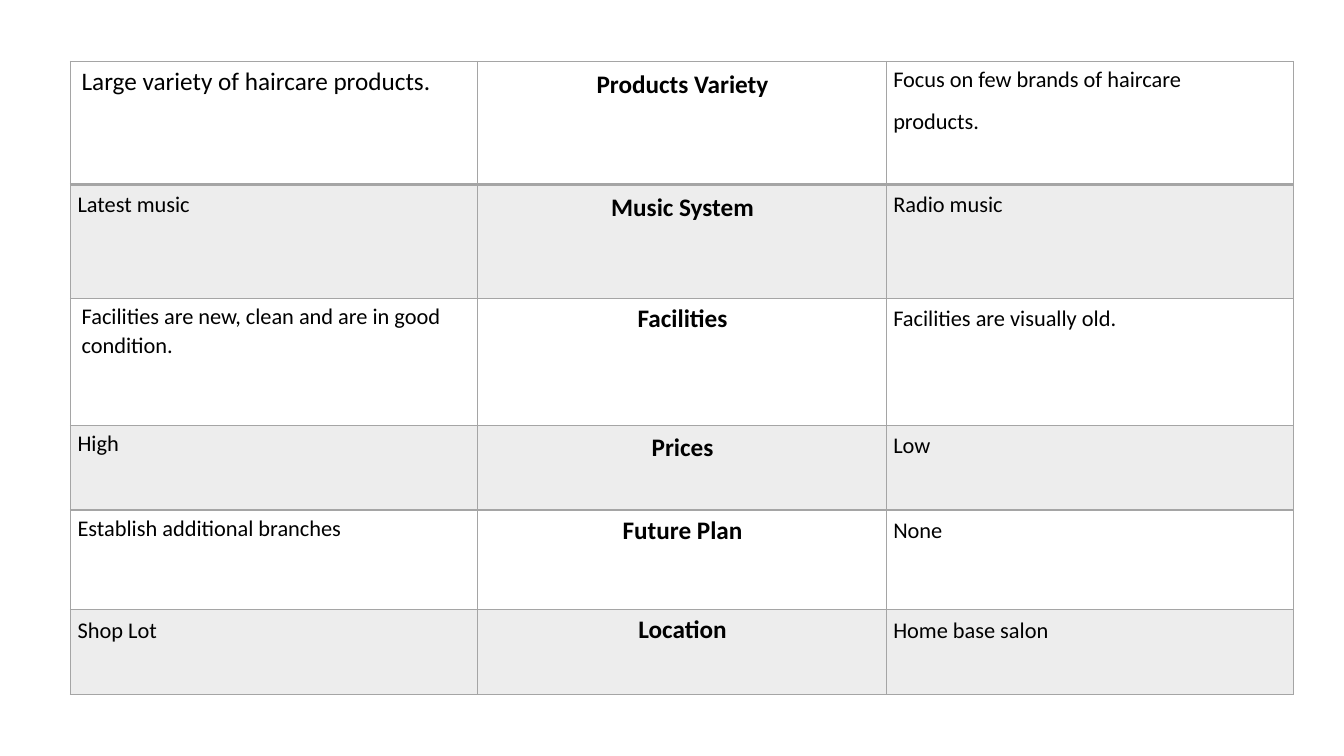
import dataclasses

import lxml.etree
import pptx
import pptx.dml.color
import pptx.enum.text
import pptx.oxml.ns
import pptx.table
import pptx.util

Inches = pptx.util.Inches
Pt = pptx.util.Pt
qn = pptx.oxml.ns.qn

GRAY = "A5A5A5"
BLACK = "000000"
COLUMN_WIDTHS = (4.04, 4.05, 4.04)


@dataclasses.dataclass(frozen=True)
class Entry:
    text: str
    size: int = 16
    bold: bool = False
    spacing: float = 1.15
    indent: float = 0


@dataclasses.dataclass(frozen=True)
class Comparison:
    height: float
    ours: Entry
    topic: Entry
    theirs: Entry


def topic(text: str, spacing: float = 1.15) -> Entry:
    return Entry(text, size=18, bold=True, spacing=spacing)


COMPARISONS = (
    Comparison(
        1.22,
        Entry("Large variety of haircare products.", 18, spacing=1.07, indent=0.04),
        topic("Products Variety"),
        Entry("Focus on few brands of haircare\nproducts.", spacing=1.07),
    ),
    Comparison(1.13, Entry("Latest music"), topic("Music System"), Entry("Radio music")),
    Comparison(
        1.26,
        Entry("Facilities are new, clean and are in good condition.", spacing=1.07, indent=0.04),
        topic("Facilities", 1.07),
        Entry("Facilities are visually old."),
    ),
    Comparison(0.84, Entry("High", spacing=1.07), topic("Prices"), Entry("Low")),
    Comparison(
        0.99,
        Entry("Establish additional branches", spacing=1.07),
        topic("Future Plan", 1.07),
        Entry("None"),
    ),
    Comparison(0.84, Entry("Shop Lot"), topic("Location", 1.07), Entry("Home base salon")),
)


def color(value: str) -> pptx.dml.color.RGBColor:
    return pptx.dml.color.RGBColor.from_string(value)


def add_borders(cell: pptx.table._Cell, bottom_width: float) -> None:
    properties = cell._tc.get_or_add_tcPr()
    for side, width in (("L", 1), ("R", 1), ("T", 1), ("B", bottom_width)):
        line = lxml.etree.SubElement(properties, qn(f"a:ln{side}"), w=str(Pt(width)))
        fill = lxml.etree.SubElement(line, qn("a:solidFill"))
        lxml.etree.SubElement(fill, qn("a:srgbClr"), val=GRAY)


def shade(cell: pptx.table._Cell, shaded: bool) -> None:
    """Fill the cell with translucent gray, or leave it clear."""
    if not shaded:
        cell.fill.background()
        return
    cell.fill.solid()
    cell.fill.fore_color.rgb = color(GRAY)
    tint = cell._tc.tcPr.find(qn("a:solidFill")).find(qn("a:srgbClr"))
    lxml.etree.SubElement(tint, qn("a:alpha"), val="20000")


def write(cell: pptx.table._Cell, entry: Entry, centered: bool) -> None:
    cell.margin_left, cell.margin_top = Inches(0.07), Inches(0.03)
    cell.margin_right, cell.margin_bottom = Inches(0.06), 0
    cell.text_frame.text = entry.text
    for paragraph in cell.text_frame.paragraphs:
        if centered:
            paragraph.alignment = pptx.enum.text.PP_ALIGN.CENTER
        paragraph.line_spacing = entry.spacing
        if entry.spacing == 1.07:
            paragraph.space_after = Pt(9.2)
        if entry.indent:
            paragraph._p.get_or_add_pPr().set("marL", str(Inches(entry.indent)))
        font = paragraph.font
        font.name, font.size, font.bold = "Calibri", Pt(entry.size), entry.bold
        font.color.rgb = color(BLACK)


def main() -> None:
    deck = pptx.Presentation()
    deck.slide_width, deck.slide_height = Inches(13.33), Inches(7.5)
    page = deck.slides.add_slide(deck.slide_layouts[6])
    total_height = sum(comparison.height for comparison in COMPARISONS)
    table = page.shapes.add_table(
        len(COMPARISONS), len(COLUMN_WIDTHS),
        Inches(0.7), Inches(0.61), Inches(sum(COLUMN_WIDTHS)), Inches(total_height),
    ).table
    table.first_row = table.horz_banding = False
    for column, width in zip(table.columns, COLUMN_WIDTHS):
        column.width = Inches(width)
    for row_index, comparison in enumerate(COMPARISONS):
        table.rows[row_index].height = Inches(comparison.height)
        entries = (comparison.ours, comparison.topic, comparison.theirs)
        for column_index, entry in enumerate(entries):
            cell = table.cell(row_index, column_index)
            write(cell, entry, centered=entry is comparison.topic)
            add_borders(cell, bottom_width=2 if row_index == 0 else 1)
            shade(cell, shaded=row_index % 2 == 1)
    deck.save("out.pptx")


if __name__ == "__main__":
    main()
